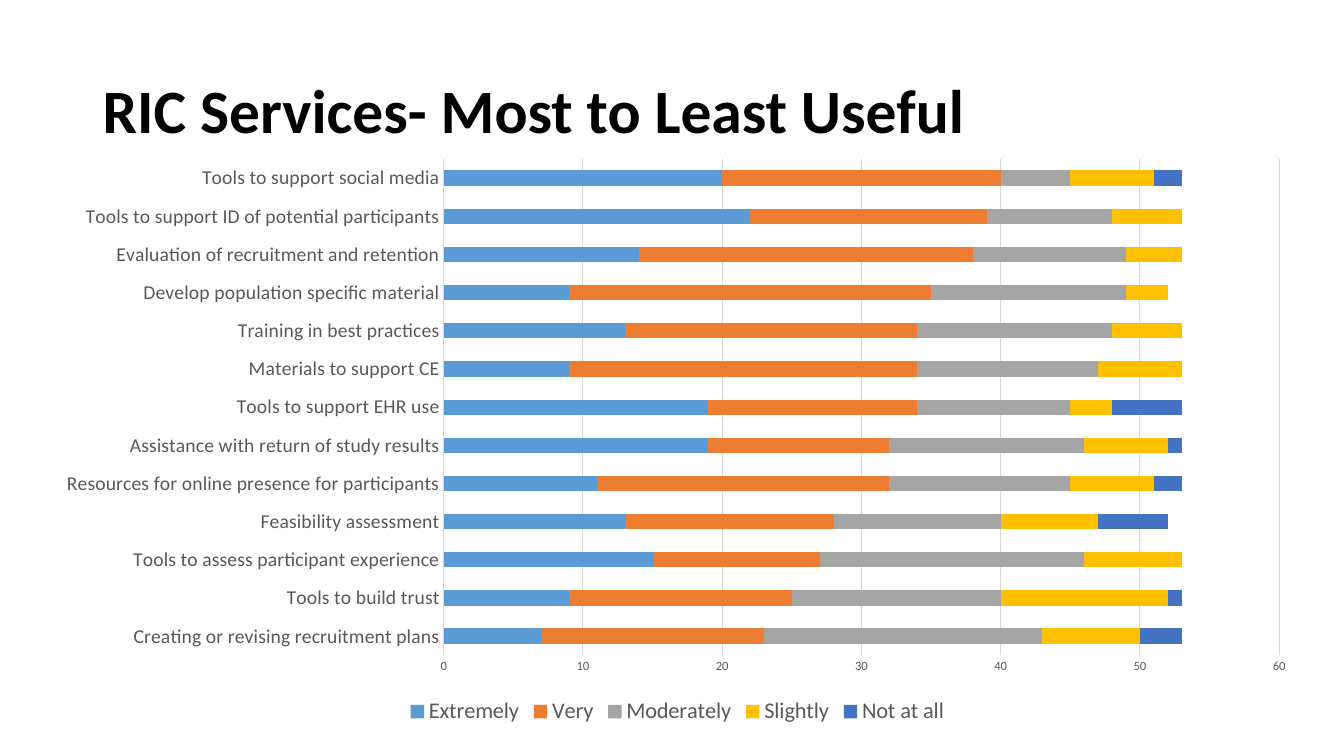
from dataclasses import dataclass

from lxml.etree import SubElement
from pptx import Presentation
from pptx.chart.data import CategoryChartData
from pptx.dml.color import RGBColor
from pptx.enum.chart import XL_CHART_TYPE, XL_LEGEND_POSITION, XL_TICK_MARK
from pptx.enum.text import MSO_ANCHOR, PP_ALIGN
from pptx.oxml.ns import qn
from pptx.util import Cm, Pt


@dataclass(frozen=True)
class Theme:
    font: str = "Calibri"
    title_color: str = "000000"
    label_color: str = "595959"
    grid_color: str = "D9D9D9"
    title_size: int = 44
    legend_size: int = 16
    service_size: int = 14
    chart_size: int = 10
    count_size: int = 9
    line_width: float = 0.75


theme = Theme()


def set_font(font, size, color, bold=False):
    font.name = theme.font
    font.size = Pt(size)
    font.bold = bold
    font.color.rgb = RGBColor.from_string(color)


def set_line(line):
    line.color.rgb = RGBColor.from_string(theme.grid_color)
    line.width = Pt(theme.line_width)


# Services from bottom to top, with answers from "Extremely" to "Not at all"
services = [
    ("Creating or revising recruitment plans", (7, 16, 20, 7, 3)),
    ("Tools to build trust", (9, 16, 15, 12, 1)),
    ("Tools to assess participant experience", (15, 12, 19, 7, 0)),
    ("Feasibility assessment", (13, 15, 12, 7, 5)),
    ("Resources for online presence for participants", (11, 21, 13, 6, 2)),
    ("Assistance with return of study results", (19, 13, 14, 6, 1)),
    ("Tools to support EHR use", (19, 15, 11, 3, 5)),
    ("Materials to support CE", (9, 25, 13, 6, 0)),
    ("Training in best practices", (13, 21, 14, 5, 0)),
    ("Develop population specific material", (9, 26, 14, 3, 0)),
    ("Evaluation of recruitment and retention", (14, 24, 11, 4, 0)),
    ("Tools to support ID of potential participants", (22, 17, 9, 5, 0)),
    ("Tools to support social media", (20, 20, 5, 6, 2)),
]
ratings = {
    "Extremely": "5B9BD5",
    "Very": "ED7D31",
    "Moderately": "A5A5A5",
    "Slightly": "FFC000",
    "Not at all": "4472C4",
}

prs = Presentation()
prs.slide_width, prs.slide_height = Cm(33.87), Cm(19.05)
slide = prs.slides.add_slide(prs.slide_layouts[5])

# Title
title = slide.shapes.title
title.left, title.top, title.width, title.height = Cm(2.33), Cm(1.01), Cm(29.21), Cm(3.68)
title.text_frame.text = "RIC Services- Most to Least Useful"
title.text_frame.vertical_anchor = MSO_ANCHOR.MIDDLE
heading = title.text_frame.paragraphs[0]
heading.alignment = PP_ALIGN.LEFT
heading.line_spacing = 0.9
set_font(heading.runs[0].font, theme.title_size, theme.title_color, bold=True)

# Stacked bars
answers = CategoryChartData()
answers.categories = [service for service, _ in services]
for rating, counts in zip(ratings, zip(*(row for _, row in services))):
    answers.add_series(rating, counts)
chart = slide.shapes.add_chart(
    XL_CHART_TYPE.BAR_STACKED, Cm(1.07), Cm(3.73), Cm(32), Cm(14.66), answers
).chart
chart.has_title = False
set_font(chart.font, theme.chart_size, theme.title_color)

bars = chart.plots[0]
bars.gap_width = 150
bars.overlap = 100
bars.vary_by_categories = False
for series, color in zip(bars.series, ratings.values()):
    series.format.fill.solid()
    series.format.fill.fore_color.rgb = RGBColor.from_string(color)

# Axes
service_axis, count_axis = chart.category_axis, chart.value_axis
for axis, size in ((service_axis, theme.service_size), (count_axis, theme.count_size)):
    axis.major_tick_mark = axis.minor_tick_mark = XL_TICK_MARK.NONE
    set_font(axis.tick_labels.font, size, theme.label_color)
service_axis.has_major_gridlines = False
set_line(service_axis.format.line)
count_axis.minimum_scale, count_axis.maximum_scale = 0, 60
count_axis.major_unit = 10
count_axis.format.line.fill.background()
count_axis.has_major_gridlines = True
set_line(count_axis.major_gridlines.format.line)

# Legend
chart.has_legend = True
chart.legend.position = XL_LEGEND_POSITION.BOTTOM
chart.legend.include_in_layout = False
set_font(chart.legend.font, theme.legend_size, theme.label_color)

# Inner plot area as fractions of the chart, leaving room for the service names
plot_area = chart.element.find(".//" + qn("c:plotArea"))
for automatic in plot_area.findall(qn("c:layout")):
    plot_area.remove(automatic)
layout = SubElement(plot_area, qn("c:layout"))
plot_area.insert(0, layout)
manual = SubElement(layout, qn("c:manualLayout"))
for tag, value in (
    ("layoutTarget", "inner"), ("xMode", "edge"), ("yMode", "edge"),
    ("x", "0.316"), ("y", "0.019"), ("w", "0.658"), ("h", "0.853"),
):
    SubElement(manual, qn(f"c:{tag}")).set("val", value)

prs.save("out.pptx")
